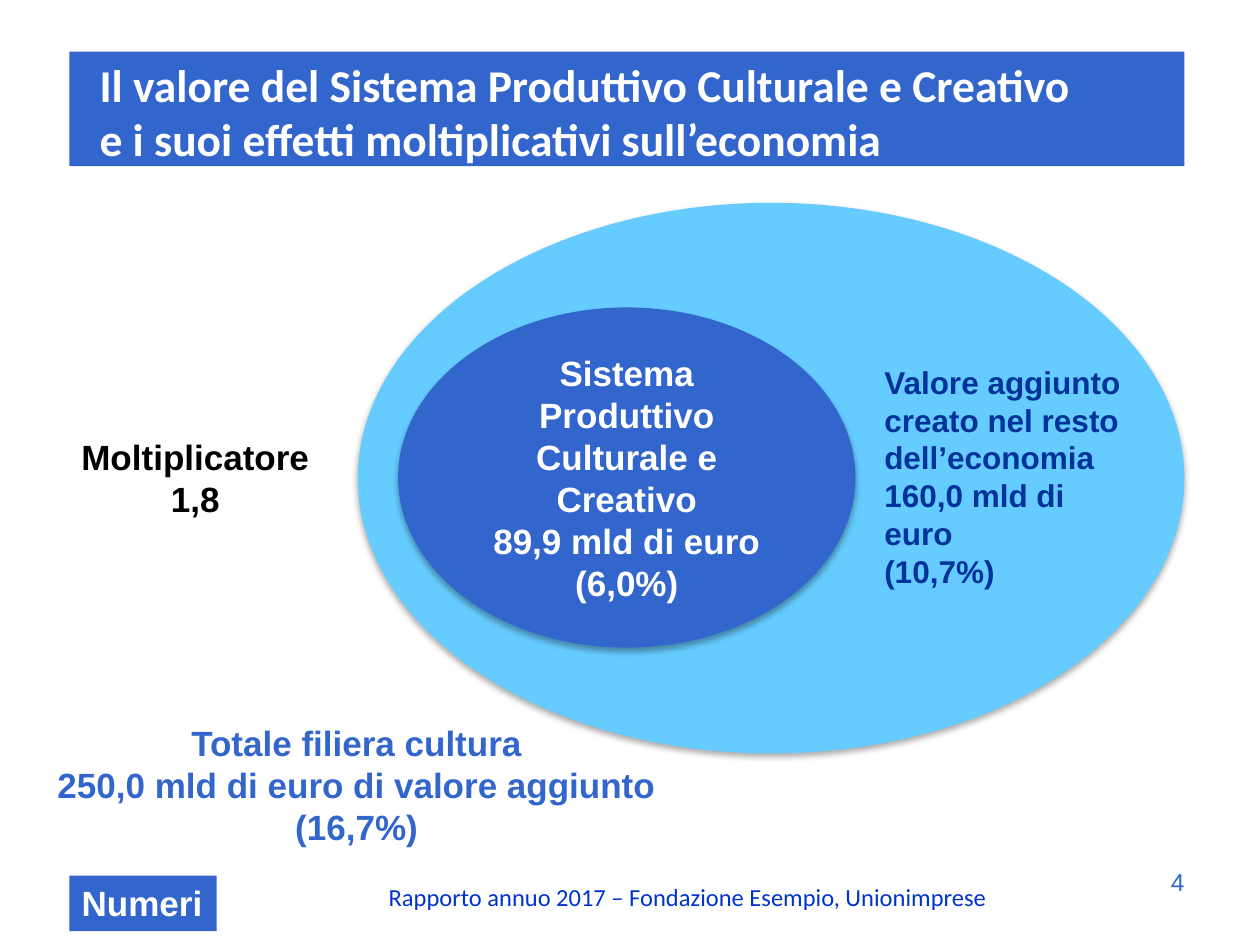
from lxml.etree import SubElement
from pptx import Presentation
from pptx.dml.color import RGBColor
from pptx.enum.shapes import MSO_SHAPE
from pptx.enum.text import MSO_ANCHOR, MSO_AUTO_SIZE, PP_ALIGN
from pptx.oxml.ns import qn
from pptx.util import Inches, Pt

BLUE = RGBColor(0x33, 0x66, 0xCC)
SKY = RGBColor(0x66, 0xCC, 0xFF)
NAVY = RGBColor(0x00, 0x33, 0x99)
FOOTER_BLUE = RGBColor(0x00, 0x33, 0xCC)
WHITE = RGBColor(0xFF, 0xFF, 0xFF)
BLACK = RGBColor(0x00, 0x00, 0x00)


def write_text(shape, lines, size=20, color=WHITE, font="Arial", bold=True,
               align=PP_ALIGN.LEFT, anchor=MSO_ANCHOR.TOP, wrap=True):
    """Write one paragraph per line, all in the same format."""
    frame = shape.text_frame
    frame.text = "\n".join(lines)
    frame.word_wrap = wrap
    frame.auto_size = MSO_AUTO_SIZE.NONE
    frame.vertical_anchor = anchor
    for paragraph in frame.paragraphs:
        paragraph.alignment = align
        for run in paragraph.runs:
            run.font.name = font
            run.font.size = Pt(size)
            run.font.bold = bold
            run.font.color.rgb = color


class SlideBuilder:
    """Holds the current slide and the style of its elements."""

    def __init__(self, slide):
        self.slide = slide

    def title(self, box, lines, fill):
        shape = self.slide.shapes.title
        shape.left, shape.top, shape.width, shape.height = map(Inches, box)
        shape.fill.solid()
        shape.fill.fore_color.rgb = fill
        write_text(shape, lines, size=26, font="Calibri")
        shape.text_frame.margin_left = Inches(0.24)
        shape.text_frame.margin_top = Inches(0.04)

    def text(self, box, lines, **text_format):
        shape = self.slide.shapes.add_textbox(*map(Inches, box))
        write_text(shape, lines, **text_format)

    def shape(self, kind, box, fill):
        shape = self.slide.shapes.add_shape(kind, *map(Inches, box))
        shape.shadow.inherit = False
        shape.fill.solid()
        shape.fill.fore_color.rgb = fill
        shape.line.fill.background()
        return shape

    def label(self, box, lines, fill=WHITE, **text_format):
        write_text(self.shape(MSO_SHAPE.RECTANGLE, box, fill), lines, **text_format)

    def ellipse(self, box, fill, lines=()):
        shape = self.shape(MSO_SHAPE.OVAL, box, fill)
        effects = shape._element.spPr.find(qn("a:effectLst"))
        shadow = SubElement(effects, qn("a:outerShdw"), blurRad=str(Pt(3.5)),
                            dist=str(Pt(2.2)), dir="5400000", rotWithShape="0")
        color = SubElement(shadow, qn("a:srgbClr"), val="000000")
        SubElement(color, qn("a:alpha"), val="32000")
        if lines:
            write_text(shape, lines, align=PP_ALIGN.CENTER, anchor=MSO_ANCHOR.MIDDLE)


def main():
    presentation = Presentation()
    presentation.slide_width = Inches(10)
    presentation.slide_height = Inches(7.5)
    title_only = presentation.slide_layouts[5]
    builder = SlideBuilder(presentation.slides.add_slide(title_only))

    # Title band
    builder.title((0.55, 0.41, 8.85, 0.91),
                  ["Il valore del Sistema Produttivo Culturale e Creativo",
                   "e i suoi effetti moltiplicativi sull’economia"], BLUE)

    # Total of the whole chain, behind the ellipses
    builder.label((0.34, 5.68, 4.98, 1.11),
                  ["Totale filiera cultura",
                   "250,0 mld di euro di valore aggiunto",
                   "(16,7%)"],
                  color=BLUE, align=PP_ALIGN.CENTER, wrap=False)

    # Nested ellipses: the core system inside the wider economy
    builder.ellipse((2.84, 1.61, 6.56, 4.37), SKY)
    builder.ellipse((3.16, 2.44, 3.63, 2.7), BLUE,
                    ["Sistema Produttivo Culturale e Creativo",
                     "89,9 mld di euro", "(6,0%)"])
    builder.text((6.92, 2.83, 2.14, 1.92),
                 ["Valore aggiunto creato nel resto dell’economia",
                  "160,0 mld di euro", "(10,7%)"], size=18, color=NAVY)

    # Multiplier
    builder.label((0.47, 3.41, 2.16, 0.77), ["Moltiplicatore 1,8"],
                  color=BLACK, align=PP_ALIGN.CENTER)

    # Footer: section tag, source and page number
    builder.label((0.55, 6.95, 1.17, 0.44), ["Numeri"], fill=BLUE, wrap=False)
    builder.text((2.16, 6.95, 6.6, 0.34),
                 ["Rapporto annuo 2017 – Fondazione Esempio, Unionimprese"],
                 size=14, color=FOOTER_BLUE, font="Calibri", bold=False,
                 align=PP_ALIGN.CENTER)
    builder.text((7.17, 6.83, 2.33, 0.52), ["4"], size=14, color=BLUE,
                 bold=False, align=PP_ALIGN.RIGHT)

    presentation.save("out.pptx")


if __name__ == "__main__":
    main()
